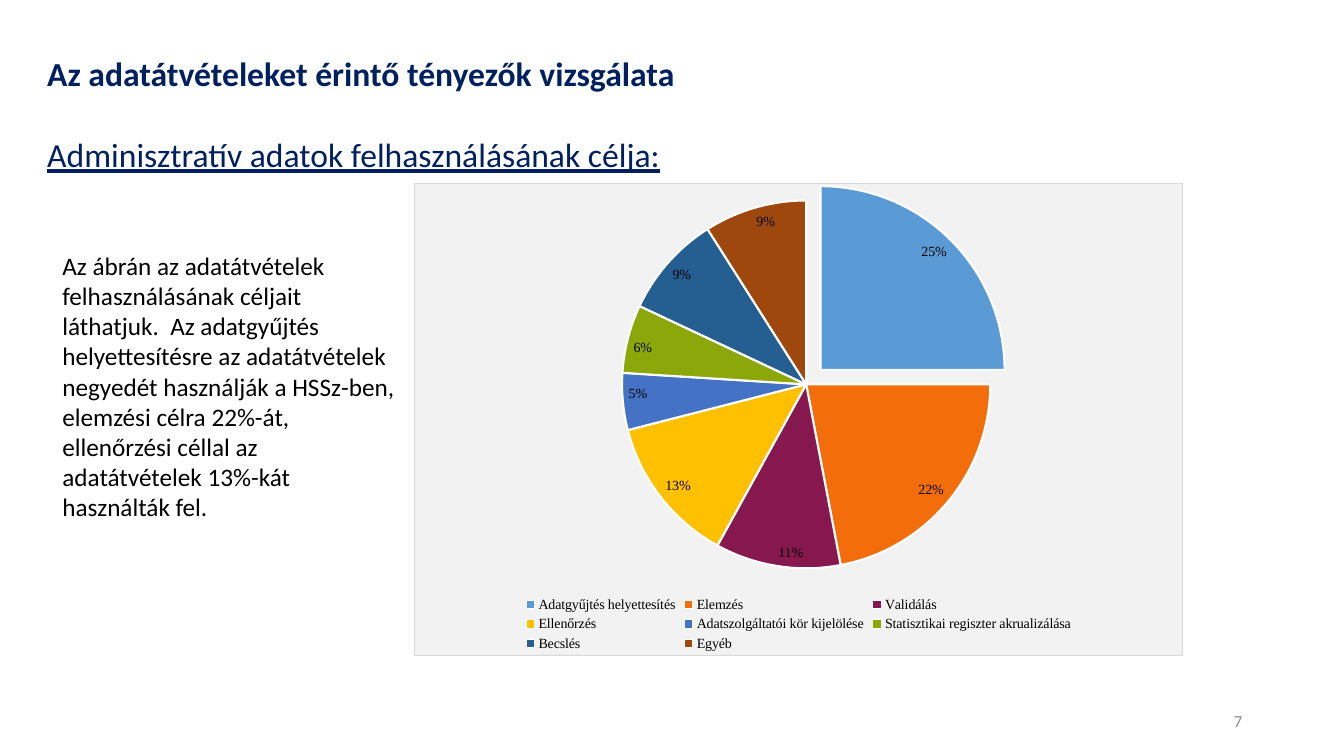
from lxml import etree
from pptx import Presentation
from pptx.chart.data import CategoryChartData
from pptx.dml.color import RGBColor
from pptx.enum.chart import XL_CHART_TYPE as ChartType
from pptx.enum.chart import XL_LABEL_POSITION as LabelPos
from pptx.enum.chart import XL_LEGEND_POSITION as LegendPos
from pptx.enum.text import MSO_ANCHOR as Anchor
from pptx.enum.text import PP_ALIGN as Align
from pptx.oxml import parse_xml
from pptx.oxml.ns import nsdecls, qn
from pptx.util import Inches, Pt

NAVY, BLACK, GREY, WHITE = "002060", "000000", "8C8C8C", "FFFFFF"
PANEL_FILL, PANEL_BORDER = "F2F2F2", "D9D9D9"
CHART_FONT = "Times New Roman"

TITLE = "Az adatátvételeket érintő tényezők vizsgálata"
SUBTITLE = "Adminisztratív adatok felhasználásának célja:"
EXPLANATION = (
    "Az ábrán az adatátvételek felhasználásának céljait láthatjuk.  "
    "Az adatgyűjtés helyettesítésre az adatátvételek negyedét használják a HSSz-ben, "
    "elemzési célra 22%-át, ellenőrzési céllal az adatátvételek 13%-kát használták fel."
)
PAGE_NUMBER = "7"

PURPOSES = [
    ("Adatgyűjtés helyettesítés", 25, "5B9BD5"),
    ("Elemzés", 22, "F36E0B"),
    ("Validálás", 11, "86184F"),
    ("Ellenőrzés", 13, "FFC000"),
    ("Adatszolgáltatói kör kijelölése", 5, "4472C4"),
    ("Statisztikai regiszter akrualizálása", 6, "8BA70A"),
    ("Becslés", 9, "255E91"),
    ("Egyéb", 9, "9E480E"),
]
CHART_BOX = (4.11, 1.82, 7.62, 4.69)
PIE_AREA = {"x": 0.27, "y": 0.03, "w": 0.48, "h": 0.79}
FIRST_SLICE_EXPLOSION = 11


def color(value):
    """Turn a hex string into a colour."""
    return RGBColor.from_string(value)


def add_text(slide, box, text, size=24, hue=NAVY, bold=False, underline=False,
             align=Align.LEFT, anchor=Anchor.TOP, spacing=1.0):
    """Add one wrapped paragraph in a text box."""
    frame = slide.shapes.add_textbox(*map(Inches, box)).text_frame
    frame.word_wrap = True
    frame.vertical_anchor = anchor
    paragraph = frame.paragraphs[0]
    paragraph.alignment = align
    paragraph.line_spacing = spacing
    run = paragraph.add_run()
    run.text = text
    font = run.font
    font.name, font.size = "Calibri", Pt(size)
    font.bold, font.underline = bold, underline
    font.color.rgb = color(hue)


def style_chart_font(font):
    """Apply the chart's font."""
    font.name, font.size, font.bold = CHART_FONT, Pt(10), False
    font.color.rgb = color(BLACK)


def frame_chart(chart):
    """Give the chart its panel and place the pie within it."""
    space = chart.element
    panel = parse_xml(
        f'<c:spPr {nsdecls("c", "a")}>'
        f'<a:solidFill><a:srgbClr val="{PANEL_FILL}"/></a:solidFill>'
        f'<a:ln w="{Pt(0.75)}"><a:solidFill><a:srgbClr val="{PANEL_BORDER}"/>'
        '</a:solidFill></a:ln></c:spPr>'
    )
    space.find(qn("c:chart")).addnext(panel)

    plot_area = space.find(".//" + qn("c:plotArea"))
    for old in plot_area.findall(qn("c:layout")):
        plot_area.remove(old)
    layout = etree.Element(qn("c:layout"))
    manual = etree.SubElement(layout, qn("c:manualLayout"))
    settings = {"layoutTarget": "inner", "xMode": "edge", "yMode": "edge", **PIE_AREA}
    for tag, value in settings.items():
        etree.SubElement(manual, qn("c:" + tag)).set("val", str(value))
    plot_area.insert(0, layout)


def add_purpose_pie(slide):
    """Add the pie of purposes with its labels and legend."""
    names, shares, hues = zip(*PURPOSES)
    data = CategoryChartData()
    data.categories = names
    data.add_series("Series 1", shares)
    chart = slide.shapes.add_chart(ChartType.PIE, *map(Inches, CHART_BOX), data).chart
    style_chart_font(chart.font)
    chart.has_title = False
    chart.has_legend = True
    chart.legend.position = LegendPos.BOTTOM
    chart.legend.include_in_layout = False
    style_chart_font(chart.legend.font)

    plot = chart.plots[0]
    plot.vary_by_categories = True
    series = plot.series[0]
    for index, hue in enumerate(hues):
        form = series.points[index].format
        form.fill.solid()
        form.fill.fore_color.rgb = color(hue)
        form.line.color.rgb = color(WHITE)
        form.line.width = Pt(1.5)
    first_slice = series._element.find(qn("c:dPt"))
    explosion = etree.Element(qn("c:explosion"), val=str(FIRST_SLICE_EXPLOSION))
    first_slice.find(qn("c:spPr")).addprevious(explosion)

    plot.has_data_labels = True
    labels = plot.data_labels
    labels.show_percentage, labels.show_value = True, False
    labels.number_format, labels.number_format_is_linked = "0%", False
    labels.position = LabelPos.INSIDE_END
    style_chart_font(labels.font)
    frame_chart(chart)


def main():
    """Build and save the slide."""
    deck = Presentation()
    deck.slide_width, deck.slide_height = Inches(13.33), Inches(7.5)
    slide = deck.slides.add_slide(deck.slide_layouts[6])
    add_text(slide, (0.37, 0.36, 9.04, 0.78), TITLE, bold=True,
             anchor=Anchor.MIDDLE, spacing=0.9)
    add_text(slide, (9.42, 6.95, 3, 0.4), PAGE_NUMBER, size=12, hue=GREY,
             align=Align.RIGHT, anchor=Anchor.MIDDLE)
    add_text(slide, (0.37, 1.28, 11.11, 0.81), SUBTITLE, underline=True)
    add_text(slide, (0.52, 2.43, 3.49, 2.83), EXPLANATION, size=18, hue=BLACK)
    add_purpose_pie(slide)
    deck.save("out.pptx")


if __name__ == "__main__":
    main()
